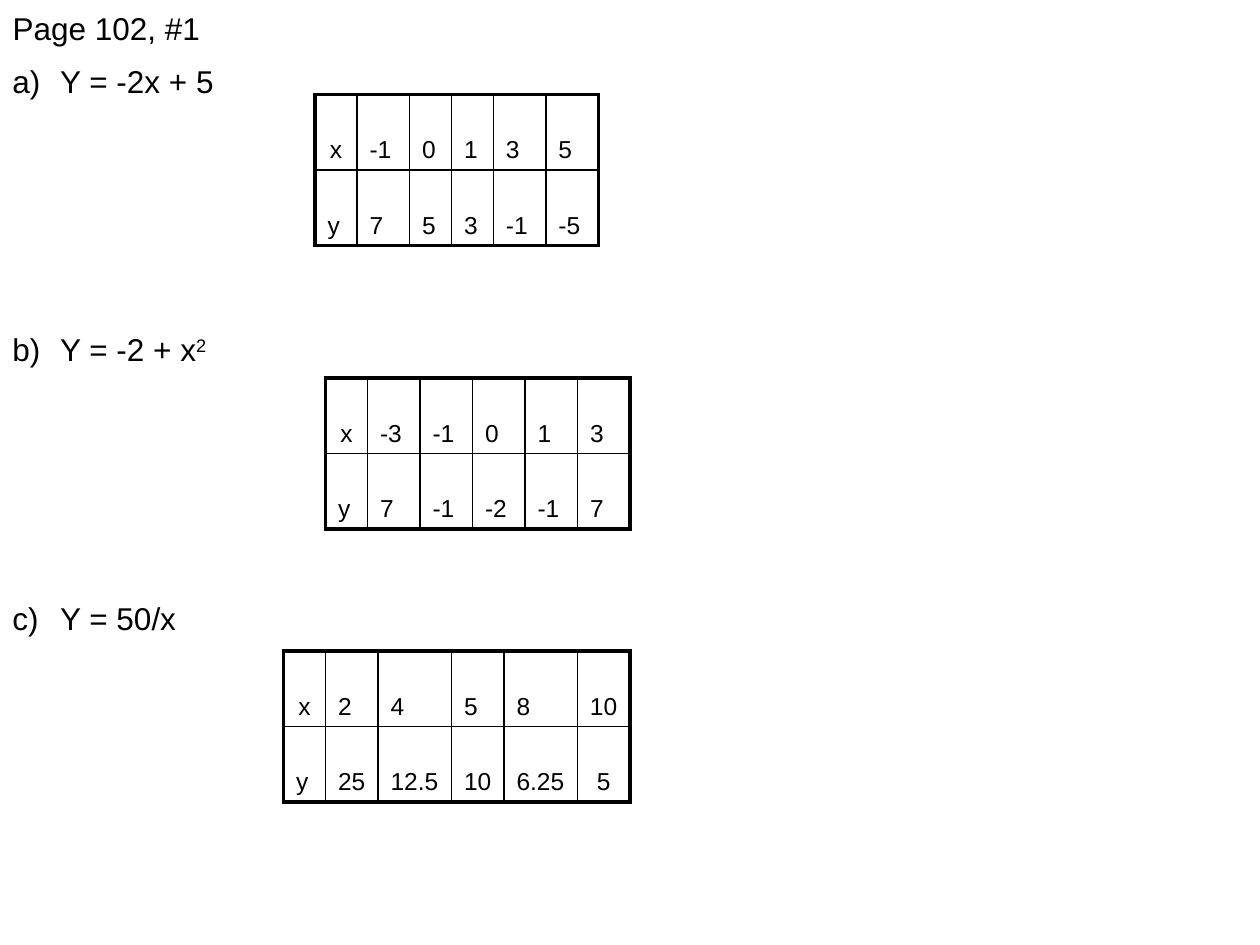
from lxml.etree import SubElement
from pptx import Presentation
from pptx.dml.color import RGBColor
from pptx.enum.text import MSO_ANCHOR, PP_ALIGN
from pptx.oxml import parse_xml
from pptx.oxml.ns import nsdecls, qn
from pptx.util import Inches, Pt

HEADING = "Page 102, #1"
EQUATIONS = [
    [("Y = -2x + 5", False)],
    [("Y = -2 + x", False), ("2", True)],
    [("Y = 50/x", False)],
]
VALUE_TABLES = [
    {"column": 30, "row": 9, "widths": [4, 5, 4, 4, 5, 5], "centred": [(0, 0)],
     "values": [["x", "-1", "0", "1", "3", "5"], ["y", "7", "5", "3", "-1", "-5"]]},
    {"column": 31, "row": 36, "widths": [4, 5, 5, 5, 5, 5], "centred": [(0, 0)],
     "values": [["x", "-3", "-1", "0", "1", "3"], ["y", "7", "-1", "-2", "-1", "7"]]},
    {"column": 27, "row": 62, "widths": [4, 5, 7, 5, 7, 5], "centred": [(0, 0), (1, 5)],
     "values": [["x", "2", "4", "5", "8", "10"], ["y", "25", "12.5", "10", "6.25", "5"]]},
]
INK = "000000"
FONT = "Arial"
GRID = Inches(1) / 12
ROW_HEIGHT = Inches(0.6)
OUTER, INNER = 2.25, 1


def color(value):
    return RGBColor.from_string(value)


def add_run(paragraph, text, size):
    run = paragraph.add_run()
    run.text = text
    run.font.name = FONT
    run.font.size = Pt(size)
    run.font.bold = False
    run.font.color.rgb = color(INK)
    return run


def set_borders(cell, widths):
    properties = cell._tc.get_or_add_tcPr()
    for index, (side, width) in enumerate(zip("LRTB", widths)):
        properties.insert(index, parse_xml(
            f'<a:ln{side} {nsdecls("a")} w="{Pt(width)}"><a:solidFill>'
            f'<a:srgbClr val="{INK}"/></a:solidFill></a:ln{side}>'))


def add_heading(slide):
    heading = slide.shapes.title
    heading.left, heading.top = 0, Inches(0.02)
    heading.width, heading.height = Inches(10), Inches(0.4)
    heading.text_frame.vertical_anchor = MSO_ANCHOR.TOP
    paragraph = heading.text_frame.paragraphs[0]
    paragraph.alignment = PP_ALIGN.LEFT
    paragraph.line_spacing = 1
    add_run(paragraph, HEADING, 18)


def add_equations(slide):
    box = slide.shapes.add_textbox(0, Inches(0.44), Inches(2.2), Inches(4.7))
    frame = box.text_frame
    frame.word_wrap = True
    for index, parts in enumerate(EQUATIONS):
        paragraph = frame.add_paragraph() if index else frame.paragraphs[0]
        properties = paragraph._p.get_or_add_pPr()
        properties.set("marL", str(Inches(0.38)))
        properties.set("indent", str(-Inches(0.38)))
        SubElement(properties, qn("a:buFont"), typeface=FONT)
        SubElement(properties, qn("a:buAutoNum"), type="alphaLcParenR")
        if index:
            paragraph.space_before = Pt(132)
        for text, raised in parts:
            run = add_run(paragraph, text, 18)
            if raised:
                run._r.get_or_add_rPr().set("baseline", "30000")


def add_values(slide, column, row, widths, centred, values):
    rows, columns = len(values), len(widths)
    table = slide.shapes.add_table(
        rows, columns, round(column * GRID), round(row * GRID),
        round(sum(widths) * GRID), rows * ROW_HEIGHT).table
    table.first_row = table.horz_banding = False
    for table_column, width in zip(table.columns, widths):
        table_column.width = round(width * GRID)
    for r, line in enumerate(values):
        table.rows[r].height = ROW_HEIGHT
        for c, text in enumerate(line):
            cell = table.cell(r, c)
            cell.fill.background()
            cell.vertical_anchor = MSO_ANCHOR.BOTTOM
            edges = (c == 0, c == columns - 1, r == 0, r == rows - 1)
            set_borders(cell, [OUTER if edge else INNER for edge in edges])
            paragraph = cell.text_frame.paragraphs[0]
            paragraph.alignment = PP_ALIGN.CENTER if (r, c) in centred else PP_ALIGN.LEFT
            add_run(paragraph, text, 14)


def main():
    deck = Presentation()
    deck.slide_width, deck.slide_height = Inches(10), Inches(7.5)
    slide = deck.slides.add_slide(deck.slide_layouts[5])
    add_heading(slide)
    add_equations(slide)
    for value_table in VALUE_TABLES:
        add_values(slide, **value_table)
    deck.save("out.pptx")


if __name__ == "__main__":
    main()
